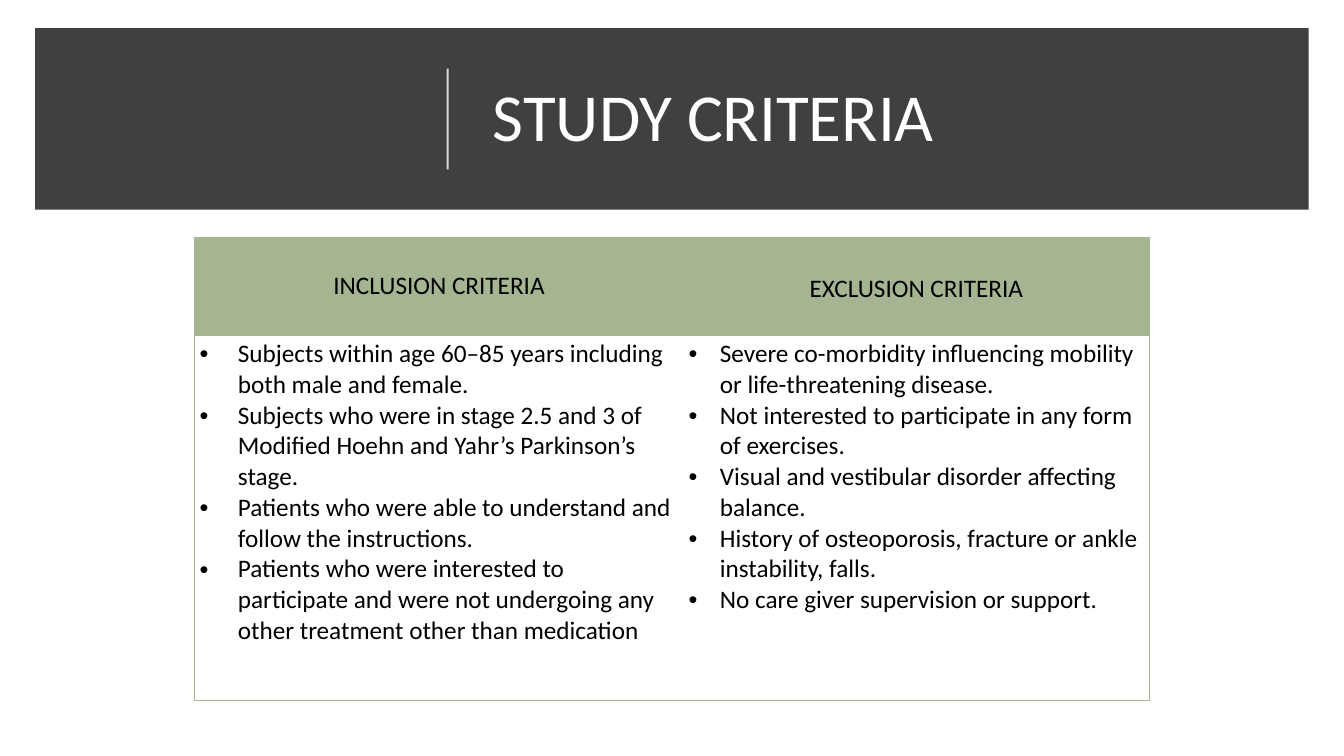
"""Build the study criteria slide: a dark title band above a two-column table."""
import pptx
import pptx.dml.color
import pptx.enum.shapes
import pptx.enum.text
import pptx.oxml
import pptx.oxml.ns
import pptx.util
from lxml import etree

Inches, Pt = pptx.util.Inches, pptx.util.Pt
ANCHOR, ALIGN = pptx.enum.text.MSO_ANCHOR, pptx.enum.text.PP_ALIGN
qn = pptx.oxml.ns.qn
GREEN = "A5B592"


def paint(target, color):
    """Give a fill or a line's fill a solid colour."""
    target.solid()
    target.fore_color.rgb = pptx.dml.color.RGBColor.from_string(color)


def style(p, size, color):
    """Format every run of a paragraph."""
    for r in p.runs:
        r.font.name, r.font.size = "Calibri", Pt(size)
        paint(r.font.fill, color)


prs = pptx.Presentation()
prs.slide_width, prs.slide_height = Inches(13.33), Inches(7.5)
s = prs.slides.add_slide(prs.slide_layouts[6])

band = s.shapes.add_shape(pptx.enum.shapes.MSO_SHAPE.RECTANGLE,
                          Inches(0.35), Inches(0.28), Inches(12.63), Inches(1.8))
band.shadow.inherit = False
paint(band.fill, "404040")
band.line.fill.background()

title = s.shapes.add_textbox(Inches(4.79), Inches(0.5), Inches(7.63), Inches(1.38))
tf = title.text_frame
tf.word_wrap = True
tf.vertical_anchor = ANCHOR.MIDDLE
tf.text = "STUDY CRITERIA"
tf.paragraphs[0].line_spacing = 0.9
style(tf.paragraphs[0], 48, "FFFFFF")

rule = s.shapes.add_connector(pptx.enum.shapes.MSO_CONNECTOR.STRAIGHT,
                              Inches(4.44), Inches(1.68), Inches(4.44), Inches(0.68))
rule.line.width = Pt(1.5)
paint(rule.line.fill, "FFFFFF")
color = rule.line._get_or_add_ln().find(".//" + qn("a:srgbClr"))
etree.SubElement(color, qn("a:alpha"), val="80000")
etree.SubElement(rule._element.spPr, qn("a:effectLst"))

criteria = [
    ("INCLUSION CRITERIA", 4.85, 0.38, 0.03, [
        "Subjects within age 60–85 years including both male and female.",
        "Subjects who were in stage 2.5 and 3 of Modified Hoehn and Yahr’s Parkinson’s stage.",
        "Patients who were able to understand and follow the instructions.",
        "Patients who were interested to participate and were not undergoing any "
        "other treatment other than medication"]),
    ("EXCLUSION CRITERIA", 4.62, 0.31, 0.09, [
        "Severe co-morbidity influencing mobility or life-threatening disease.",
        "Not interested to participate in any form of exercises.",
        "Visual and vestibular disorder affecting balance.",
        "History of osteoporosis, fracture or ankle instability, falls.",
        "No care giver supervision or support."]),
]
table = s.shapes.add_table(2, 2, Inches(1.93), Inches(2.35), Inches(9.47), Inches(4.6)).table
table.first_row = table.horz_banding = False
for row, height in zip(table.rows, (0.98, 3.62)):
    row.height = Inches(height)

for col, (heading, width, indent, top, items) in enumerate(criteria):
    table.columns[col].width = Inches(width)
    for row, lines in enumerate(([heading], items)):
        cell = table.cell(row, col)
        cell.margin_left = cell.margin_right = Inches(0.05)
        cell.margin_top = Inches(0.03 if row else top)
        cell.margin_bottom = Inches(0.03)
        cell.vertical_anchor = ANCHOR.TOP if row else ANCHOR.MIDDLE
        cell.text_frame.text = "\n".join(lines)
        for p in cell.text_frame.paragraphs:
            style(p, 18, "000000")
            if row:
                pPr = p._p.get_or_add_pPr()
                pPr.set("marL", str(Inches(indent)))
                pPr.set("indent", str(-Inches(indent)))
                etree.SubElement(pPr, qn("a:buFont"), typeface="Arial")
                etree.SubElement(pPr, qn("a:buChar"), char="•")
            else:
                p.alignment = ALIGN.CENTER

        if row:
            cell.fill.background()
        else:
            paint(cell.fill, GREEN)
        edges = {"L": col == 0, "R": col == 1, "T": True, "B": True}
        for i, (side, shown) in enumerate(edges.items()):
            ln = etree.Element(qn("a:ln" + side), w=str(Pt(0.5)))
            if shown:
                fill = etree.SubElement(ln, qn("a:solidFill"))
                etree.SubElement(fill, qn("a:srgbClr"), val=GREEN)
            else:
                etree.SubElement(ln, qn("a:noFill"))
            cell._tc.get_or_add_tcPr().insert(i, ln)

prs.save("out.pptx")
